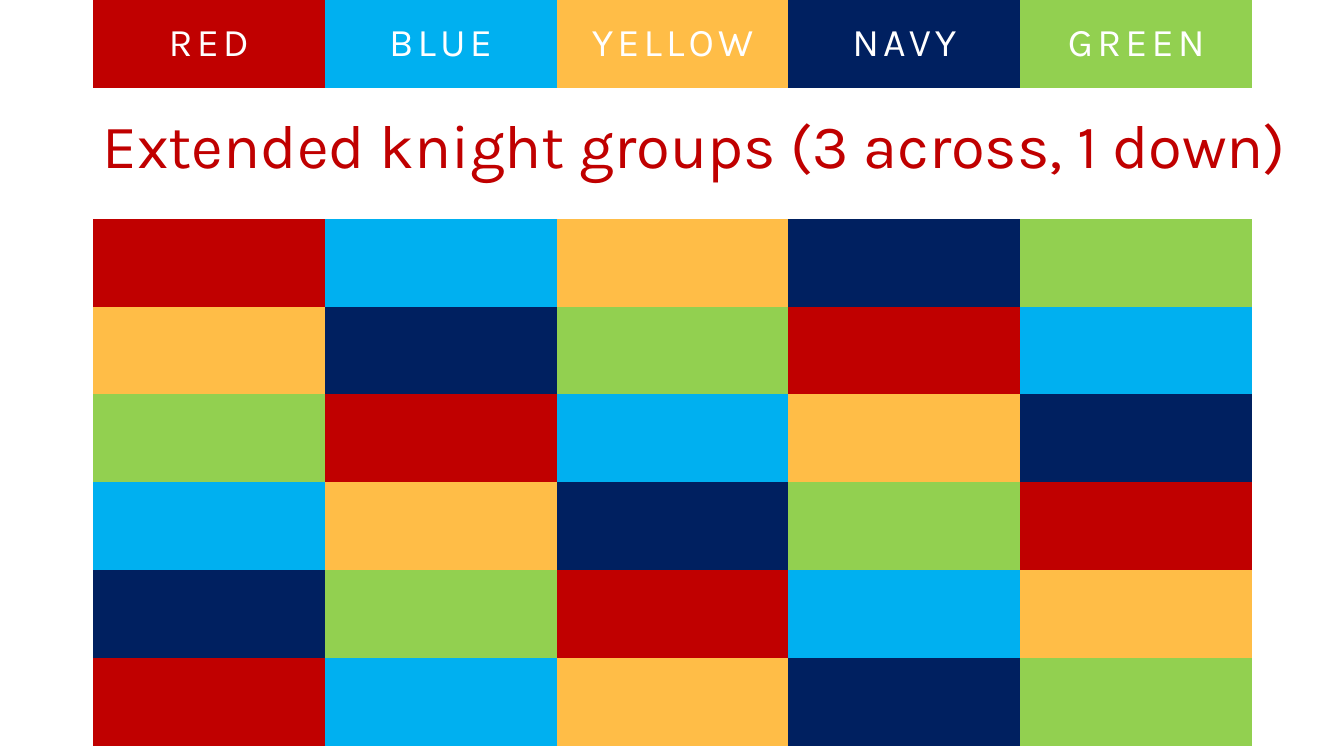
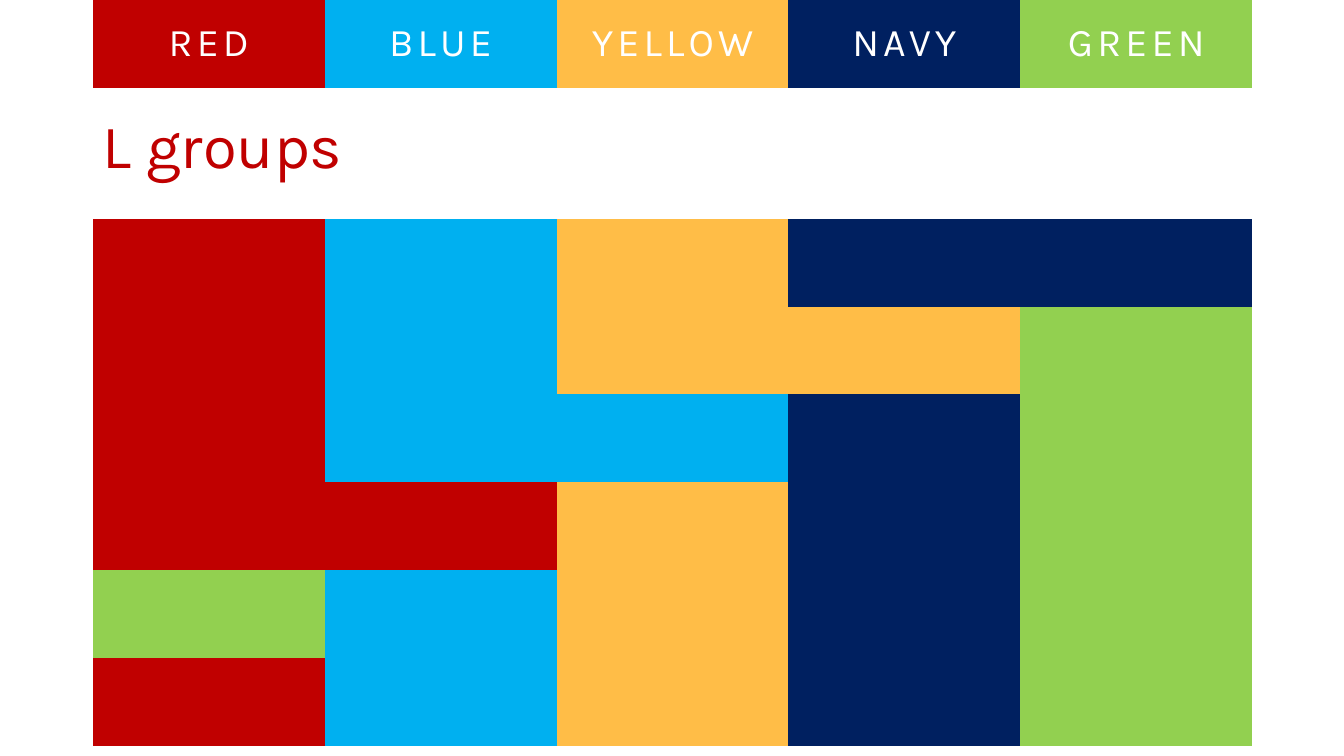
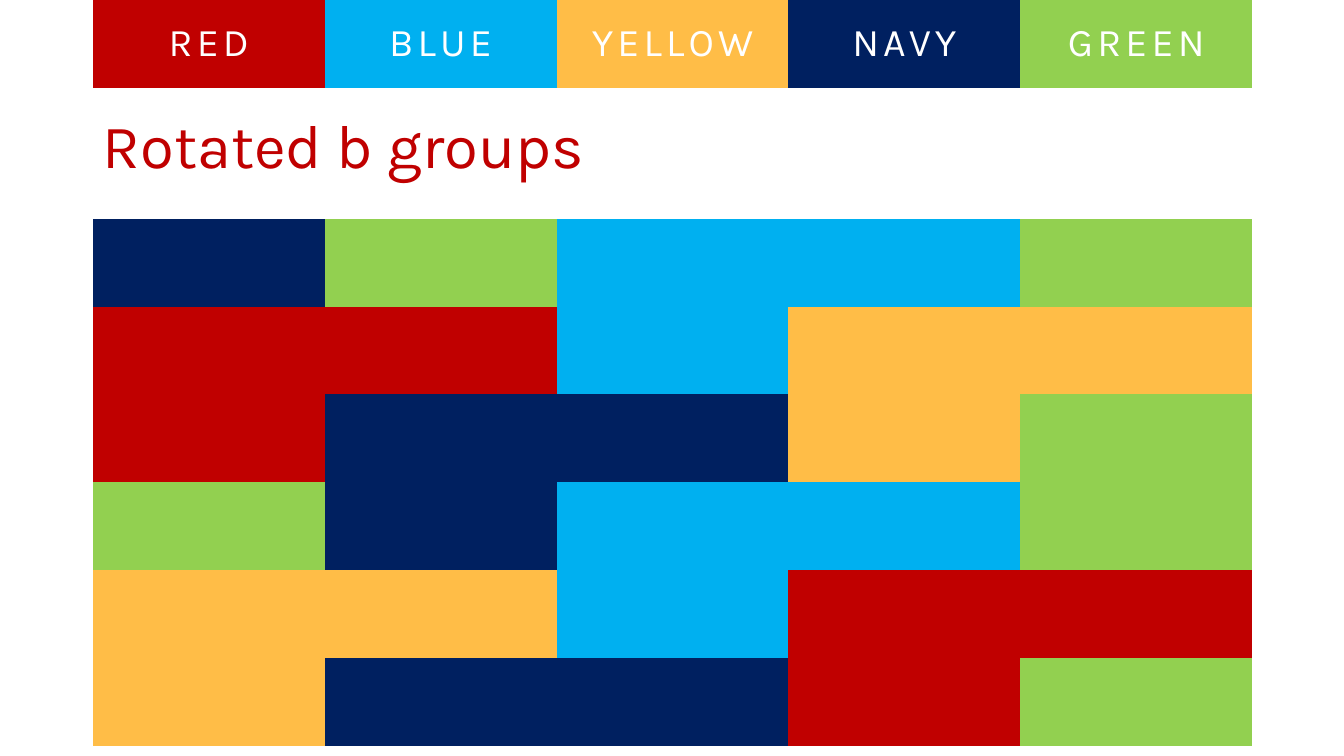
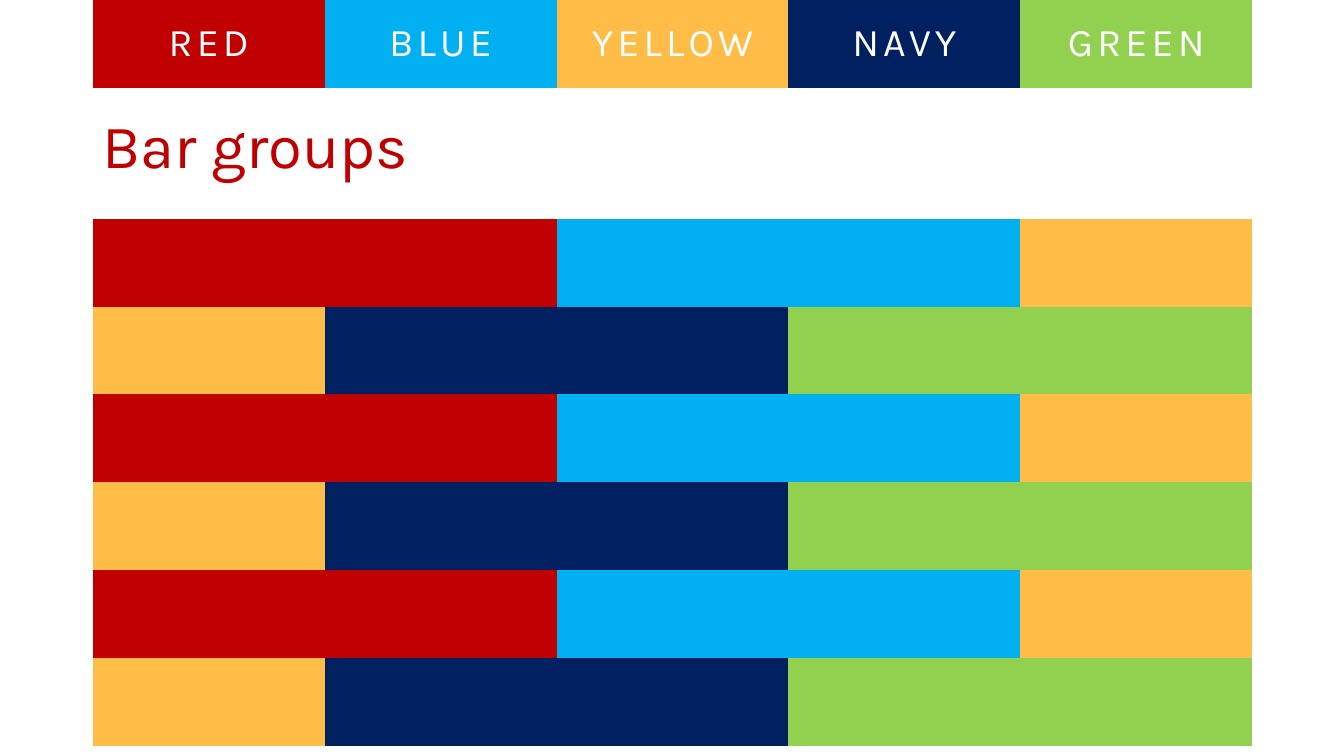
from dataclasses import dataclass

from pptx import Presentation
from pptx import util as u
from pptx.dml.color import RGBColor
from pptx.enum import text as t
from pptx.oxml.ns import qn


@dataclass(frozen=True)
class Theme:
    font: str = "Karla"
    title_size: int = 44
    label_size: int = 28
    label_tracking: int = 3
    red: str = "C00000"
    blue: str = "00B0F0"
    yellow: str = "FFBD47"
    navy: str = "002060"
    green: str = "92D050"
    white: str = "FFFFFF"


THEME = Theme()
WIDTH, HEIGHT = 13.33, 7.5
LEFT, COLUMN, ROW = 0.92, 2.3, 5.23 / 6
WALL_TOP = 2.17
TITLE_TOP, TITLE_HEIGHT = 0.4, 1.45

GROUPS = ("red", "blue", "yellow", "navy", "green")
COLOURS = {name[0].upper(): getattr(THEME, name) for name in GROUPS}

WALLS = {
    "Extended knight groups (3 across, 1 down)":
        ("RBYNG", "YNGRB", "GRBYN", "BYNGR", "NGRBY", "RBYNG"),
    "L groups":
        ("RBYNN", "RBYYG", "RBBNG", "RRYNG", "GBYNG", "RBYNG"),
    "Rotated b groups":
        ("NGBBG", "RRBYY", "RNNYG", "GNBBG", "YYBRR", "YNNRG"),
    "Bar groups": ("RRBBY", "YNNGG") * 3,
}


def write(frame, words, *, size, colour, align=t.PP_ALIGN.LEFT,
          tracking=0, line_spacing=None):
    para = frame.paragraphs[0]
    para.alignment = align
    para.line_spacing = line_spacing
    span = para.add_run()
    span.text = words
    span.font.name = THEME.font
    span.font.size = u.Pt(size)
    span.font.color.rgb = RGBColor.from_string(colour)
    if tracking:
        span.font._element.set("spc", str(tracking * 100))


def remove_borders(cell):
    properties = cell._tc.get_or_add_tcPr()
    for index, side in enumerate(("lnL", "lnR", "lnT", "lnB")):
        border = properties.makeelement(qn(f"a:{side}"), {"w": "0"})
        border.append(border.makeelement(qn("a:noFill"), {}))
        properties.insert(index, border)


def add_colour_grid(page, top, rows):
    count = len(rows[0])
    table = page.shapes.add_table(
        len(rows), count, u.Inches(LEFT), u.Inches(top),
        u.Inches(COLUMN * count), u.Inches(ROW * len(rows))).table
    table.first_row = False
    table.horz_banding = False
    for row, letters in enumerate(rows):
        for column, letter in enumerate(letters):
            cell = table.cell(row, column)
            cell.fill.solid()
            cell.fill.fore_color.rgb = RGBColor.from_string(COLOURS[letter])
            remove_borders(cell)
    return table


def add_legend(page):
    table = add_colour_grid(page, 0, ["".join(COLOURS)])
    for column, name in enumerate(GROUPS):
        cell = table.cell(0, column)
        cell.vertical_anchor = t.MSO_ANCHOR.MIDDLE
        write(cell.text_frame, name.upper(), size=THEME.label_size,
              colour=THEME.white, align=t.PP_ALIGN.CENTER,
              tracking=THEME.label_tracking)


def add_title(page, words):
    box = page.shapes.add_textbox(
        u.Inches(LEFT), u.Inches(TITLE_TOP),
        u.Inches(WIDTH - LEFT), u.Inches(TITLE_HEIGHT))
    frame = box.text_frame
    frame.word_wrap = True
    frame.vertical_anchor = t.MSO_ANCHOR.BOTTOM
    write(frame, words, size=THEME.title_size, colour=THEME.red,
          line_spacing=0.9)


def main():
    deck = Presentation()
    deck.slide_width = u.Inches(WIDTH)
    deck.slide_height = u.Inches(HEIGHT)
    for title, rows in WALLS.items():
        page = deck.slides.add_slide(deck.slide_layouts[6])
        add_title(page, title)
        add_colour_grid(page, WALL_TOP, rows)
        add_legend(page)
    deck.save("out.pptx")


if __name__ == "__main__":
    main()
